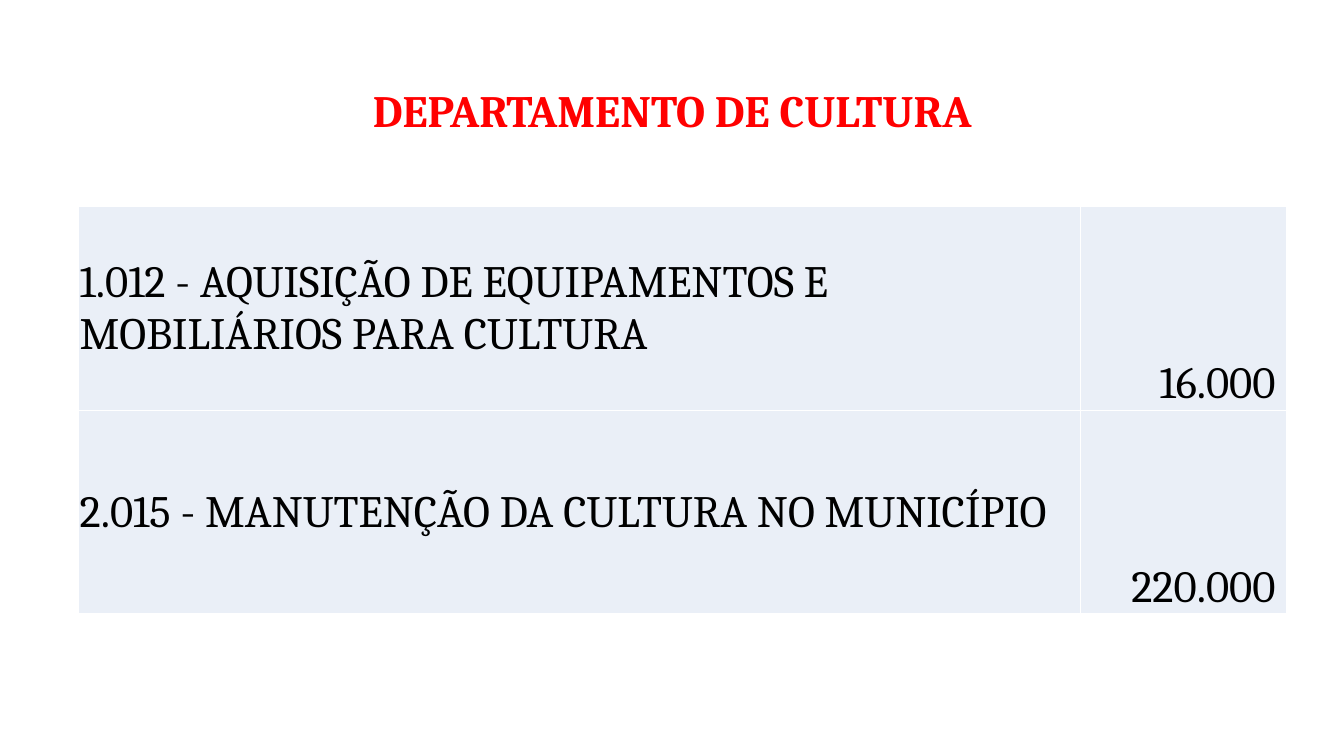
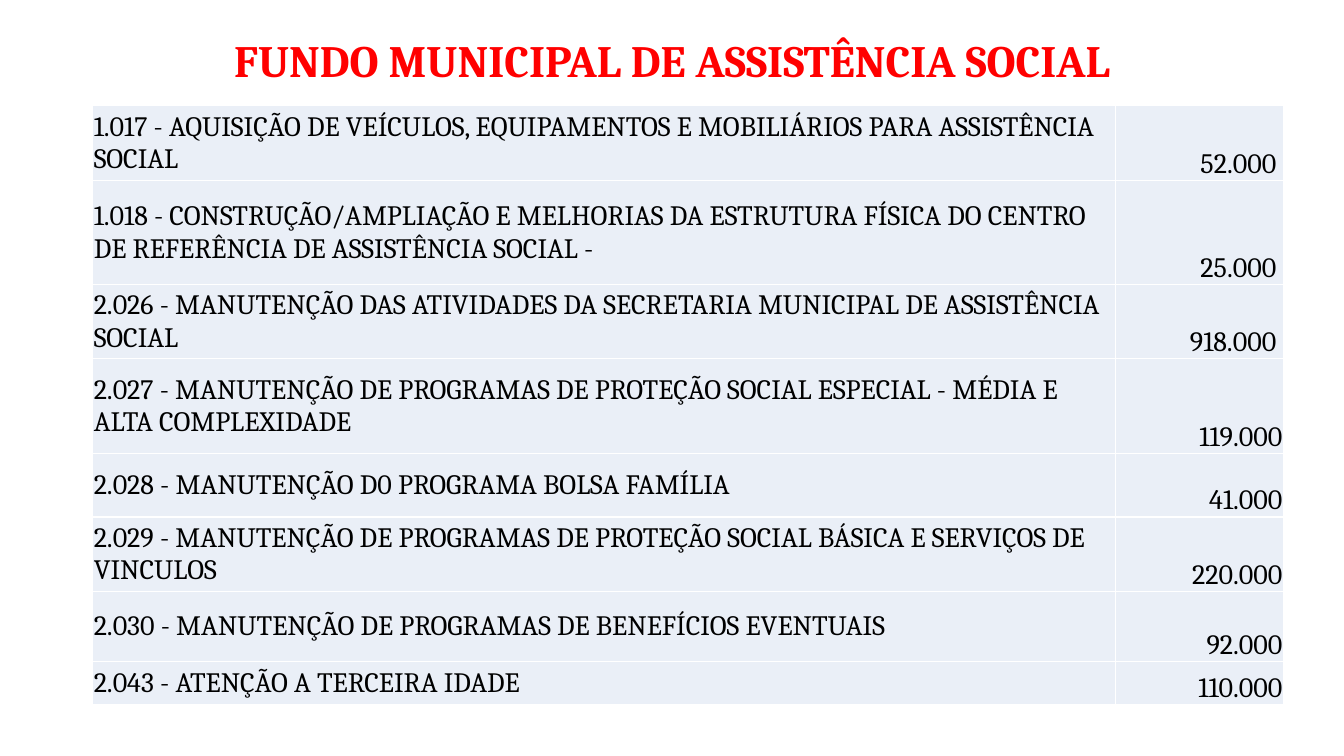
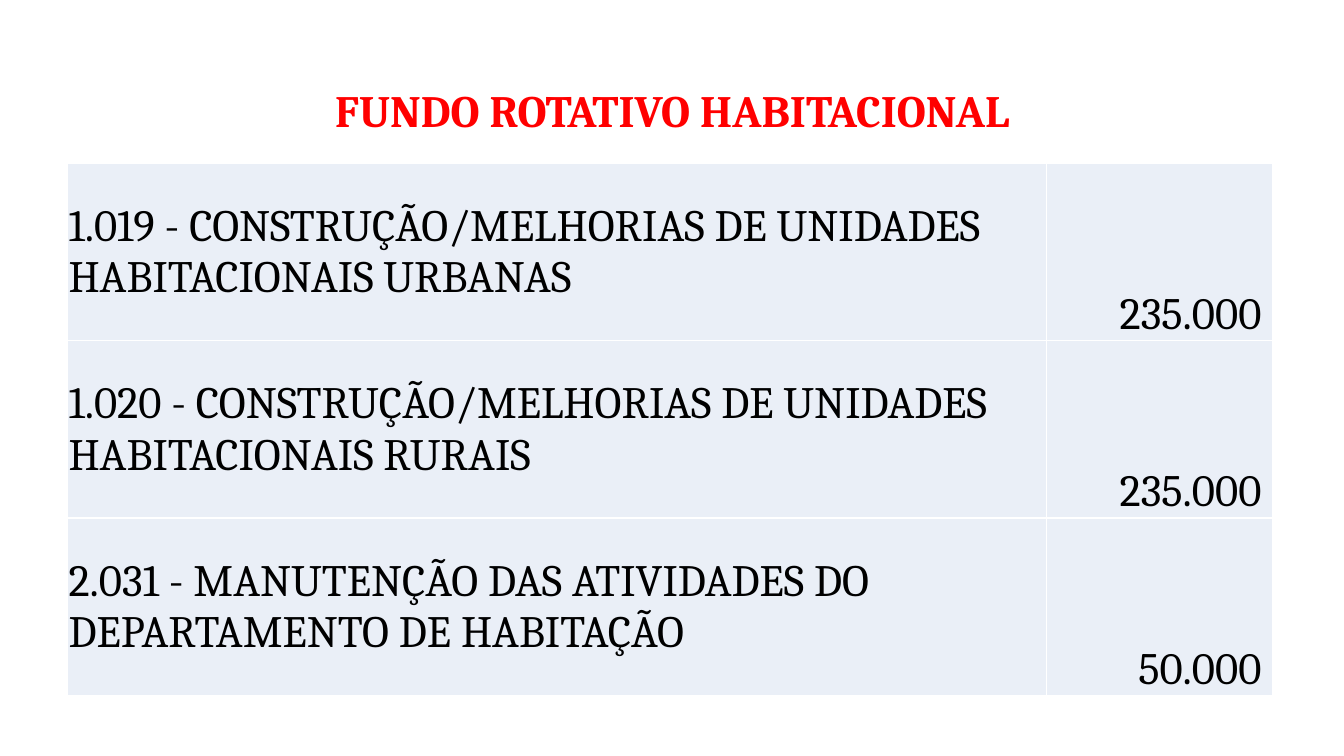
from dataclasses import dataclass

from lxml import etree
from pptx import Presentation
from pptx.dml.color import RGBColor
from pptx.enum import text as t
from pptx.oxml import ns
from pptx.util import Inches, Pt


@dataclass(frozen=True)
class Theme:
    font: str = "Cambria"
    title_color: str = "FF0000"
    text_color: str = "000000"
    cell_color: str = "EAEFF7"
    border_color: str = "FFFFFF"
    border_width: float = 1
    title_size: int = 32
    large_size: int = 32
    small_size: int = 20
    cell_inset: float = 0.01
    value_indent: float = 0.22  # share of the type size


THEME = Theme()
TITLE_LEFT, TITLE_WIDTH = 0.92, 11.5

# "indented" counts the leading rows whose value stands off the right edge.
BUDGETS = [
    {
        "title": "DEPARTAMENTO DE CULTURA",
        "title_top": 0.4, "title_height": 1.45,
        "table_at": (0.78, 2.05), "columns": (9.94, 2.04),
        "row_heights": [2.02] * 2,
        "size": THEME.large_size, "indented": 2,
        "rows": [
            ("1.012 - AQUISIÇÃO DE EQUIPAMENTOS E MOBILIÁRIOS PARA CULTURA", "16.000"),
            ("2.015 - MANUTENÇÃO DA CULTURA NO MUNICÍPIO", "220.000"),
        ],
    },
    {
        "title": "FUNDO MUNICIPAL DE ASSISTÊNCIA SOCIAL",
        "title_top": 0.19, "title_height": 0.86,
        "table_at": (0.92, 1.05), "columns": (10.14, 1.67),
        "row_heights": [0.74, 1.03, 0.74, 0.94, 0.63, 0.74, 0.69, 0.43],
        "size": THEME.small_size, "indented": 3,
        "rows": [
            ("1.017 - AQUISIÇÃO DE VEÍCULOS, EQUIPAMENTOS E MOBILIÁRIOS PARA "
             "ASSISTÊNCIA SOCIAL", "52.000"),
            ("1.018 - CONSTRUÇÃO/AMPLIAÇÃO E MELHORIAS DA ESTRUTURA FÍSICA DO CENTRO "
             "DE REFERÊNCIA DE ASSISTÊNCIA SOCIAL -", "25.000"),
            ("2.026 - MANUTENÇÃO DAS ATIVIDADES DA SECRETARIA MUNICIPAL DE "
             "ASSISTÊNCIA SOCIAL", "918.000"),
            ("2.027 - MANUTENÇÃO DE PROGRAMAS DE PROTEÇÃO SOCIAL ESPECIAL - MÉDIA E "
             "ALTA COMPLEXIDADE", "119.000"),
            ("2.028 - MANUTENÇÃO D0 PROGRAMA BOLSA FAMÍLIA", "41.000"),
            ("2.029 - MANUTENÇÃO DE PROGRAMAS DE PROTEÇÃO SOCIAL BÁSICA E SERVIÇOS DE "
             "VINCULOS", "220.000"),
            ("2.030 - MANUTENÇÃO DE PROGRAMAS DE BENEFÍCIOS EVENTUAIS", "92.000"),
            ("2.043 - ATENÇÃO A TERCEIRA IDADE", "110.000"),
        ],
    },
    {
        "title": "FUNDO ROTATIVO HABITACIONAL",
        "title_top": 0.4, "title_height": 1.45,
        "table_at": (0.67, 1.62), "columns": (9.71, 2.24),
        "row_heights": [1.76] * 3,
        "size": THEME.large_size, "indented": 3,
        "rows": [
            ("1.019 - CONSTRUÇÃO/MELHORIAS DE UNIDADES HABITACIONAIS URBANAS", "235.000"),
            ("1.020 - CONSTRUÇÃO/MELHORIAS DE UNIDADES HABITACIONAIS RURAIS", "235.000"),
            ("2.031 - MANUTENÇÃO DAS ATIVIDADES DO DEPARTAMENTO DE HABITAÇÃO", "50.000"),
        ],
    },
]


def add_text(frame, words, size, color, align, bold=False):
    para = frame.paragraphs[0]
    para.alignment = align
    span = para.add_run()
    span.text = words
    span.font.name = THEME.font
    span.font.size = Pt(size)
    span.font.bold = bold
    span.font.color.rgb = RGBColor.from_string(color)
    return para


def add_title(page, budget):
    box = page.shapes.title
    box.left, box.width = Inches(TITLE_LEFT), Inches(TITLE_WIDTH)
    box.top, box.height = Inches(budget["title_top"]), Inches(budget["title_height"])
    frame = box.text_frame
    frame.auto_size = t.MSO_AUTO_SIZE.NONE
    frame.vertical_anchor = t.MSO_ANCHOR.MIDDLE
    para = add_text(frame, budget["title"], THEME.title_size, THEME.title_color,
                    t.PP_ALIGN.CENTER, bold=True)
    para.line_spacing = 0.9


def style_cell(cell):
    cell.margin_left = cell.margin_right = cell.margin_top = Inches(THEME.cell_inset)
    cell.margin_bottom = 0
    properties = cell._tc.get_or_add_tcPr()
    for side in ("a:lnL", "a:lnR", "a:lnT", "a:lnB"):  # borders precede the fill
        line = etree.SubElement(properties, ns.qn(side), w=str(Pt(THEME.border_width)))
        fill = etree.SubElement(line, ns.qn("a:solidFill"))
        etree.SubElement(fill, ns.qn("a:srgbClr"), val=THEME.border_color)
    cell.fill.solid()
    cell.fill.fore_color.rgb = RGBColor.from_string(THEME.cell_color)


def add_budget_table(page, budget):
    rows, columns, heights = budget["rows"], budget["columns"], budget["row_heights"]
    left, top = budget["table_at"]
    table = page.shapes.add_table(
        len(rows), len(columns), Inches(left), Inches(top),
        Inches(sum(columns)), Inches(sum(heights))).table
    table.first_row = table.horz_banding = False
    for column, width in zip(table.columns, columns):
        column.width = Inches(width)
    for index, (row, height, words) in enumerate(zip(table.rows, heights, rows)):
        row.height = Inches(height)
        for cell in row.cells:
            style_cell(cell)
        action, value = row.cells
        action.vertical_anchor = t.MSO_ANCHOR.MIDDLE
        value.vertical_anchor = t.MSO_ANCHOR.BOTTOM
        if index < budget["indented"]:
            value.margin_right += Pt(THEME.value_indent * budget["size"])
        for cell, content, align in zip(
                row.cells, words, (t.PP_ALIGN.LEFT, t.PP_ALIGN.RIGHT)):
            add_text(cell.text_frame, content, budget["size"], THEME.text_color, align)


def main():
    deck = Presentation()
    deck.slide_width, deck.slide_height = Inches(13.33), Inches(7.5)
    title_only = deck.slide_layouts[5]
    for budget in BUDGETS:
        page = deck.slides.add_slide(title_only)
        add_title(page, budget)
        add_budget_table(page, budget)
    deck.save("out.pptx")


if __name__ == "__main__":
    main()
